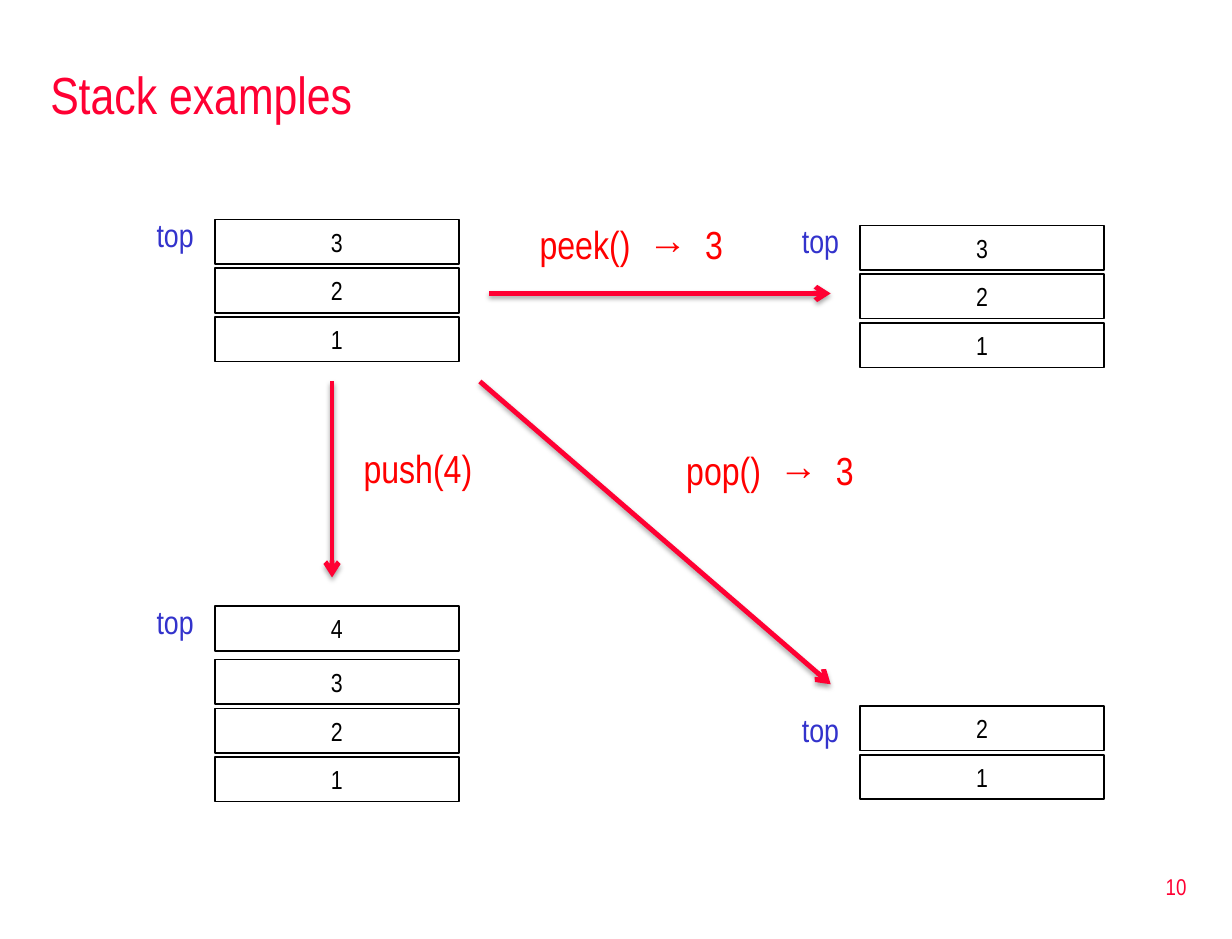
from lxml.etree import SubElement
from pptx import Presentation
from pptx.dml.color import RGBColor
from pptx.enum.shapes import MSO_CONNECTOR, MSO_SHAPE
from pptx.enum.text import MSO_ANCHOR as Anchor, PP_ALIGN as Align
from pptx.oxml.ns import qn
from pptx.util import Inches, Pt

CRIMSON = RGBColor(0xFF, 0x00, 0x33)
RED = RGBColor(0xFF, 0x00, 0x00)
BLUE = RGBColor(0x33, 0x33, 0xCC)
BLACK = RGBColor(0x00, 0x00, 0x00)
FONT = "Arial Narrow"

# Grid in inches: two columns of stacks, cells at an equal pitch
SLIDE_W, SLIDE_H = 10.5, 8
LEFT_COL, RIGHT_COL = 1.83, 7.33
CELL_W, CELL_H = 2.08, 0.38
PITCH = 0.415
LABEL_OFFSET = 0.75
LABEL_W, LABEL_H = 0.67, 0.43


def write(shape, text, size=24, color=RED, align=Align.LEFT, anchor=Anchor.TOP):
    frame = shape.text_frame
    frame.word_wrap = True
    frame.vertical_anchor = anchor
    paragraph = frame.paragraphs[0]
    paragraph.alignment = align
    run = paragraph.add_run()
    run.text = text
    run.font.name = FONT
    run.font.size = Pt(size)
    run.font.color.rgb = color


def add_text(shapes, box, text, **style):
    write(shapes.add_textbox(*map(Inches, box)), text, **style)


def add_cell(shapes, left, top, value):
    box = map(Inches, (left, top, CELL_W, CELL_H))
    cell = shapes.add_shape(MSO_SHAPE.RECTANGLE, *box)
    cell.shadow.inherit = False
    cell.fill.background()
    cell.line.color.rgb = BLACK
    cell.line.width = Pt(1)
    write(cell, str(value), size=16, color=BLACK, align=Align.CENTER,
          anchor=Anchor.MIDDLE)


def add_stack(slide, left, base, values, label_top, lift=0):
    """Stack values upwards from base; lift sets the top cell apart."""
    shapes = slide.shapes.add_group_shape().shapes
    for level, value in enumerate(values):
        is_top = level == len(values) - 1
        add_cell(shapes, left, base - level * PITCH - lift * is_top, value)
    add_text(shapes, (left - LABEL_OFFSET, label_top, LABEL_W, LABEL_H), "top",
             size=20, color=BLUE, align=Align.RIGHT)


def add_arrow(slide, start, end):
    arrow = slide.shapes.add_connector(
        MSO_CONNECTOR.STRAIGHT, *map(Inches, start + end))
    arrow.line.color.rgb = CRIMSON
    arrow.line.width = Pt(3)
    SubElement(arrow.line._get_or_add_ln(), qn("a:tailEnd"), type="arrow")
    # Soft shadow straight below the line
    effects = SubElement(arrow._element.spPr, qn("a:effectLst"))
    shadow = SubElement(effects, qn("a:outerShdw"), blurRad=str(Pt(3.1)),
                        dist=str(Pt(1.8)), dir="5400000", rotWithShape="0")
    tint = SubElement(shadow, qn("a:srgbClr"), val=str(BLACK))
    SubElement(tint, qn("a:alpha"), val="35000")


def main():
    prs = Presentation()
    prs.slide_width, prs.slide_height = Inches(SLIDE_W), Inches(SLIDE_H)
    slide = prs.slides.add_slide(prs.slide_layouts[6])
    shapes = slide.shapes

    # Title and page number
    add_text(shapes, (0.33, 0.42, 9.92, 0.75), "Stack examples",
             size=32, color=CRIMSON, anchor=Anchor.MIDDLE)
    add_text(shapes, (8.02, 7.29, 2.19, 0.53), "10", size=14, color=CRIMSON,
             align=Align.RIGHT, anchor=Anchor.MIDDLE)

    # Starting stack, then the stack after each operation
    add_stack(slide, LEFT_COL, 2.7, (1, 2, 3), label_top=1.78)
    add_stack(slide, RIGHT_COL, 2.75, (1, 2, 3), label_top=1.83)
    add_stack(slide, LEFT_COL, 6.45, (1, 2, 3, 4), label_top=5.08, lift=0.04)
    add_stack(slide, RIGHT_COL, 6.43, (1, 2), label_top=6)

    # Operations
    operations = (
        ("peek()  →  3", (4.5, 1.83, 1.92, 0.51), (4.17, 2.5), (7.08, 2.5)),
        ("push(4)", (3, 3.74, 1.17, 0.51), (2.83, 3.25), (2.83, 4.92)),
        ("pop()  →  3", (5.75, 3.75, 1.92, 0.51), (4.09, 3.25), (7.08, 5.83)),
    )
    for call, box, start, end in operations:
        add_text(shapes, box, call)
        add_arrow(slide, start, end)

    prs.save("out.pptx")


if __name__ == "__main__":
    main()
